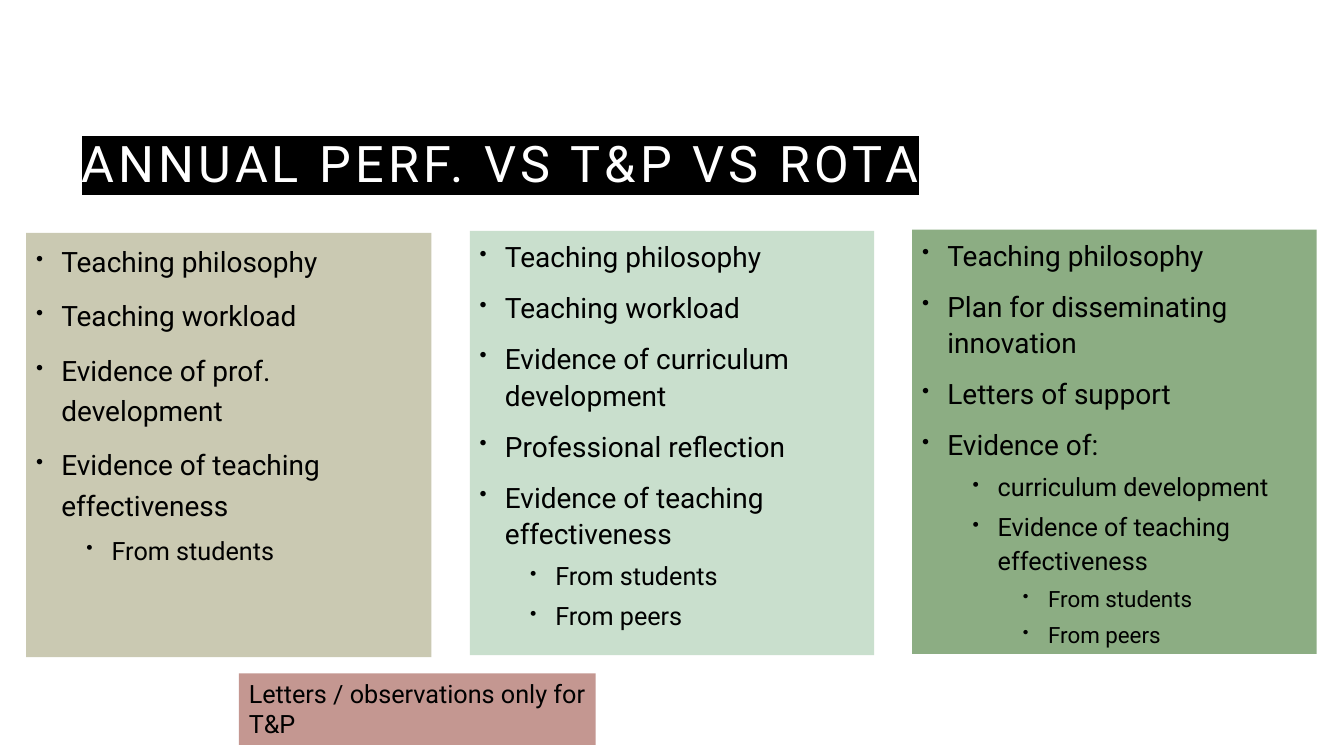
from lxml.etree import SubElement
from pptx import Presentation
from pptx.dml.color import RGBColor
from pptx.enum.shapes import MSO_SHAPE as Shape
from pptx.enum.text import MSO_ANCHOR as Anchor, MSO_AUTO_SIZE as AutoSize, PP_ALIGN as Align
from pptx.oxml import parse_xml
from pptx.oxml.ns import nsdecls, qn
from pptx.util import Cm, Pt

BLACK = RGBColor(0x00, 0x00, 0x00)
WHITE = RGBColor(0xFF, 0xFF, 0xFF)
SAND = RGBColor(0xCA, 0xC9, 0xB2)
MINT = RGBColor(0xC9, 0xDF, 0xCD)
GREEN = RGBColor(0x8C, 0xAD, 0x83)
ROSE = RGBColor(0xC4, 0x97, 0x91)

FONT = "Roboto"
LEVEL_SIZES = (20, 18, 16)
COLUMN_HEIGHT = 10.69

# Left, top, width, fill, line spacing, then (level, text) entries
COLUMNS = [
    (0.66, 5.87, 10.21, SAND, 1.2, [
        (0, "Teaching philosophy"),
        (0, "Teaching workload"),
        (0, "Evidence of prof. development"),
        (0, "Evidence of teaching effectiveness"),
        (1, "From students"),
    ]),
    (11.84, 5.82, 10.19, MINT, 1.1, [
        (0, "Teaching philosophy"),
        (0, "Teaching workload"),
        (0, "Evidence of curriculum development"),
        (0, "Professional reflection"),
        (0, "Evidence of teaching effectiveness"),
        (1, "From students"),
        (1, "From peers"),
    ]),
    (22.99, 5.79, 10.19, GREEN, 1.1, [
        (0, "Teaching philosophy"),
        (0, "Plan for disseminating innovation"),
        (0, "Letters of support"),
        (0, "Evidence of:"),
        (1, "curriculum development"),
        (1, "Evidence of teaching effectiveness"),
        (2, "From students"),
        (2, "From peers"),
    ]),
]


def add_line(frame, text, size=18, color=BLACK, level=None, spacing=None):
    """Fill the empty first paragraph or append one; a level makes it a bullet."""
    first = not frame.text
    line = frame.paragraphs[0] if first else frame.add_paragraph()
    line.alignment = Align.LEFT
    if level is not None:
        line.level = level
        props = line._p.get_or_add_pPr()
        props.set("marL", str(Cm(0.635 + 1.27 * level)))
        props.set("indent", str(Cm(-0.635)))
        bullet_color = SubElement(props, qn("a:buClr"))
        SubElement(bullet_color, qn("a:srgbClr"), val=str(BLACK))
        SubElement(props, qn("a:buSzPct"), val="75000")
        SubElement(props, qn("a:buChar"), char="•")
        if not first:
            line.space_before = Pt(5 if level else 10)
    if spacing:
        line.line_spacing = spacing
    run = line.add_run()
    run.text = text
    run.font.name = FONT
    run.font.size = Pt(size)
    run.font.color.rgb = color
    return run


def add_panel(left, top, width, height, fill):
    panel = slide.shapes.add_shape(Shape.RECTANGLE, Cm(left), Cm(top), Cm(width), Cm(height))
    panel.shadow.inherit = False
    panel.fill.solid()
    panel.fill.fore_color.rgb = fill
    panel.line.fill.background()
    panel.text_frame.vertical_anchor = Anchor.TOP
    panel.text_frame.word_wrap = True
    return panel.text_frame


deck = Presentation()
deck.slide_width, deck.slide_height = Cm(33.87), Cm(19.05)
slide = deck.slides.add_slide(deck.slide_layouts[5])

title = slide.shapes.title
title.left, title.top, title.width, title.height = Cm(1.8), Cm(1.8), Cm(29.51), Cm(3.18)
title.text_frame.vertical_anchor = Anchor.BOTTOM
title.text_frame.auto_size = AutoSize.NONE
heading = add_line(title.text_frame, "ANNUAL PERF. VS T&P VS ROTA", size=36, color=WHITE, spacing=1.2)
heading_props = heading.font._element
heading_props.set("spc", "300")
heading_props.find(qn("a:solidFill")).addnext(parse_xml(
    f'<a:highlight {nsdecls("a")}><a:srgbClr val="{BLACK}"/></a:highlight>'))

for left, top, width, fill, spacing, entries in COLUMNS:
    column = add_panel(left, top, width, COLUMN_HEIGHT, fill)
    for level, text in entries:
        add_line(column, text, size=LEVEL_SIZES[level], level=level, spacing=spacing)

note = add_panel(6.02, 16.97, 8.99, 1.8, ROSE)
note.word_wrap = False
note.auto_size = AutoSize.SHAPE_TO_FIT_TEXT
for text in ("Letters / observations only for", "T&P"):
    add_line(note, text)

deck.save("out.pptx")
